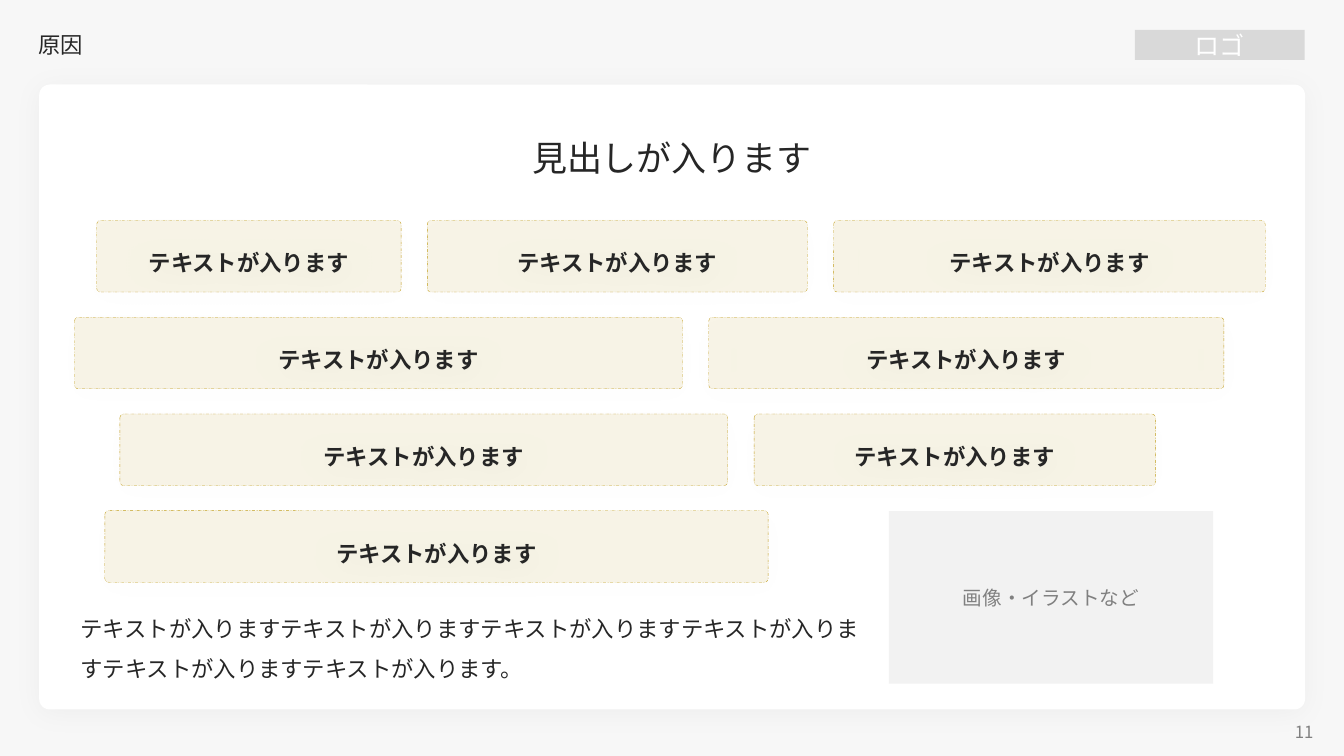
"""Builds the causes slide: a white card with rows of dashed text boxes."""
from lxml import etree
from pptx import Presentation
from pptx.dml.color import RGBColor
from pptx.enum import dml, shapes, text
from pptx.oxml import ns
from pptx.util import Pt

HUES = {"back": "F7F7F7", "card": "FFFFFF", "logo": "D9D9D9", "image": "F2F2F2",
        "gold": "C09B17", "ink": "262626", "gray": "808080", "shade": "000000"}
SANS = "Noto Sans CJK JP"
LABEL = "テキストが入ります"
BODY = LABEL * 6 + "。"
ROWS = [(69.1, (217.4, 271.4, 308.2)), (53.3, (434.2, 367.9)),
        (85.7, (434.2, 286.6)), (74.9, (473.8,))]
TOP, PITCH, TALL, GAP = 157.5, 69.1, 51.1, 18.8
LEFT, MID, RIGHT = text.PP_ALIGN.LEFT, text.PP_ALIGN.CENTER, text.PP_ALIGN.RIGHT
RECT, ROUND = shapes.MSO_SHAPE.RECTANGLE, shapes.MSO_SHAPE.ROUNDED_RECTANGLE
NOTES = [
    ((721.4, 514.1, 223.9, 17.3), "11", 12, "gray", RIGHT, True, 1),
    ((20.2, 18, 720, 29.5), "原因", 16, "ink", LEFT, True, 0.9),
    ((85.7, 93.6, 788.4, 37.4), "見出しが入ります", 25, "ink", MID, False, 1),
    ((50.4, 426.2, 576.7, 61.9), BODY, 16, "ink", LEFT, False, 1.5),
]


def child(node, tag, **attrs):
    return etree.SubElement(node, ns.qn(tag), attrs)


def write(shape, words, size, hue, align=MID, mid=True, gap=1, bold=False, face=SANS):
    frame = shape.text_frame
    frame.word_wrap = True
    frame.vertical_anchor = text.MSO_ANCHOR.MIDDLE if mid else text.MSO_ANCHOR.TOP
    frame.text = words
    para = frame.paragraphs[0]
    para.alignment = align
    if gap != 1:
        para.line_spacing = gap
    run = para.runs[0]
    font = run.font
    font.size, font.bold, font.name = Pt(size), bold, face
    font.color.rgb = RGBColor.from_string(HUES[hue])
    child(font._element, "a:ea", typeface=face)


def block(slide, kind, box, hue, curve=0):
    shape = slide.shapes.add_shape(kind, *map(Pt, box))
    if kind == ROUND:
        shape.adjustments[0] = curve
    shape.shadow.inherit = False
    shape.fill.solid()
    shape.fill.fore_color.rgb = RGBColor.from_string(HUES[hue])
    shape.line.fill.background()
    return shape


def shade(shape, alpha, dist):
    group = shape._element.spPr.find(ns.qn("a:effectLst"))
    cast = child(group, "a:outerShdw", blurRad=str(Pt(20)), dist=str(Pt(dist)),
                 dir="5400000", algn="t", rotWithShape="0")
    color = child(cast, "a:srgbClr", val=HUES["shade"])
    child(color, "a:alpha", val=str(alpha * 1000))


def label(slide, box):
    shape = block(slide, ROUND, box, "gold", 0.052)
    fill = shape._element.spPr.find(ns.qn("a:solidFill"))
    child(fill[0], "a:alpha", val="10000")
    shape.line.color.rgb = RGBColor.from_string(HUES["gold"])
    shape.line.width = Pt(0.25)
    shape.line.dash_style = dml.MSO_LINE.DASH_DOT_DOT
    shade(shape, 5, 4)
    write(shape, LABEL, 16, "ink", gap=1.5, bold=True)


def main():
    deck = Presentation()
    deck.slide_width, deck.slide_height = Pt(960), Pt(540)
    slide = deck.slides.add_slide(deck.slide_layouts[6])
    block(slide, ROUND, (0, 0, 960, 540), "back")
    card = block(slide, ROUND, (28, 60.4, 904.2, 446.4), "card", 0.017)
    shade(card, 3, 3)
    logo = block(slide, RECT, (810.7, 21.4, 121.2, 21.4), "logo")
    write(logo, "ロゴ", 18, "card")
    for box, *style in NOTES:
        write(slide.shapes.add_textbox(*map(Pt, box)), *style)
    for row, (left, widths) in enumerate(ROWS):
        for width in widths:
            label(slide, (left, TOP + row * PITCH, width, TALL))
            left += width + GAP
    image = block(slide, RECT, (635, 365.2, 231.6, 123.2), "image")
    write(image, "画像・イラストなど", 14, "gray", face="Roboto")
    deck.save("out.pptx")


if __name__ == "__main__":
    main()
